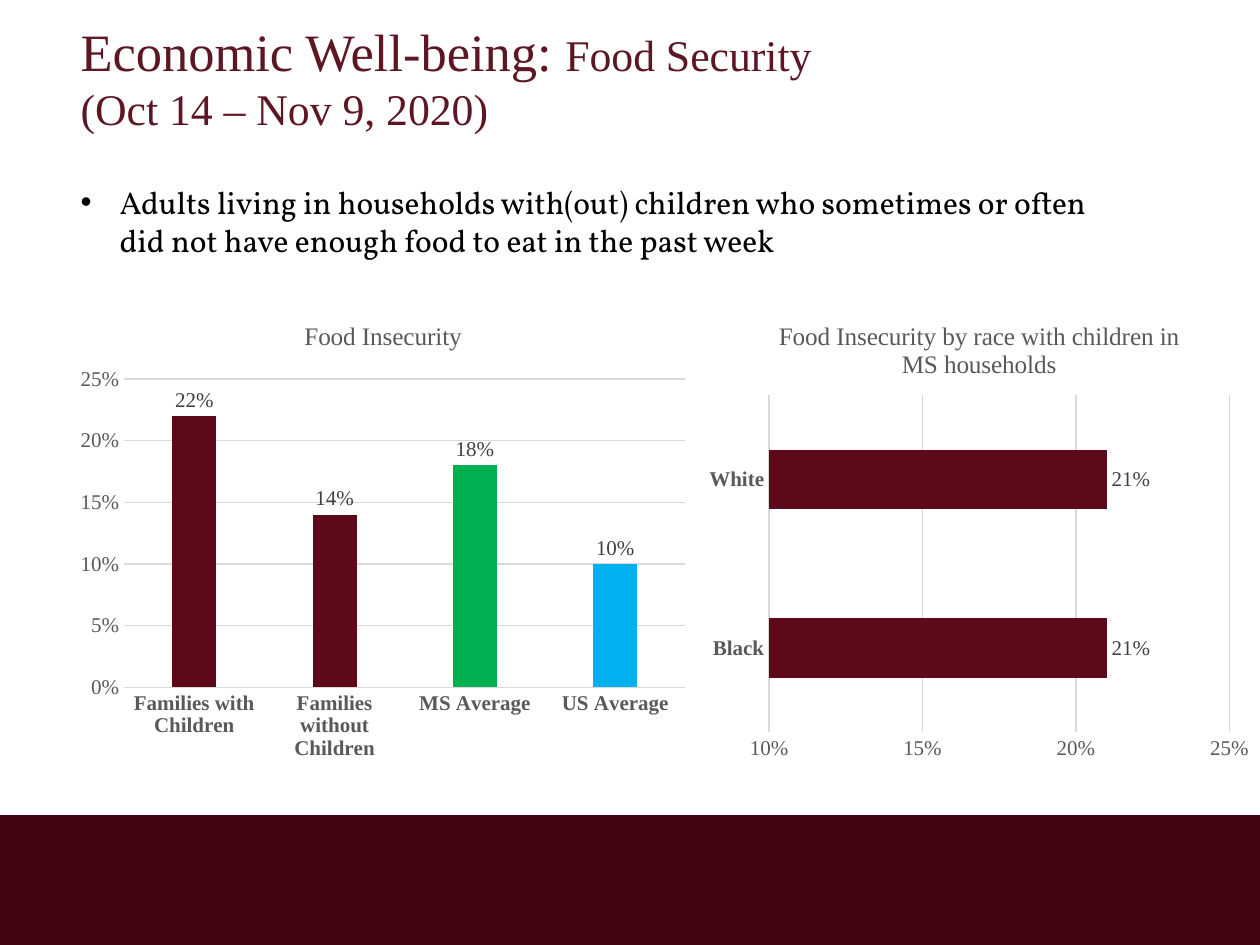
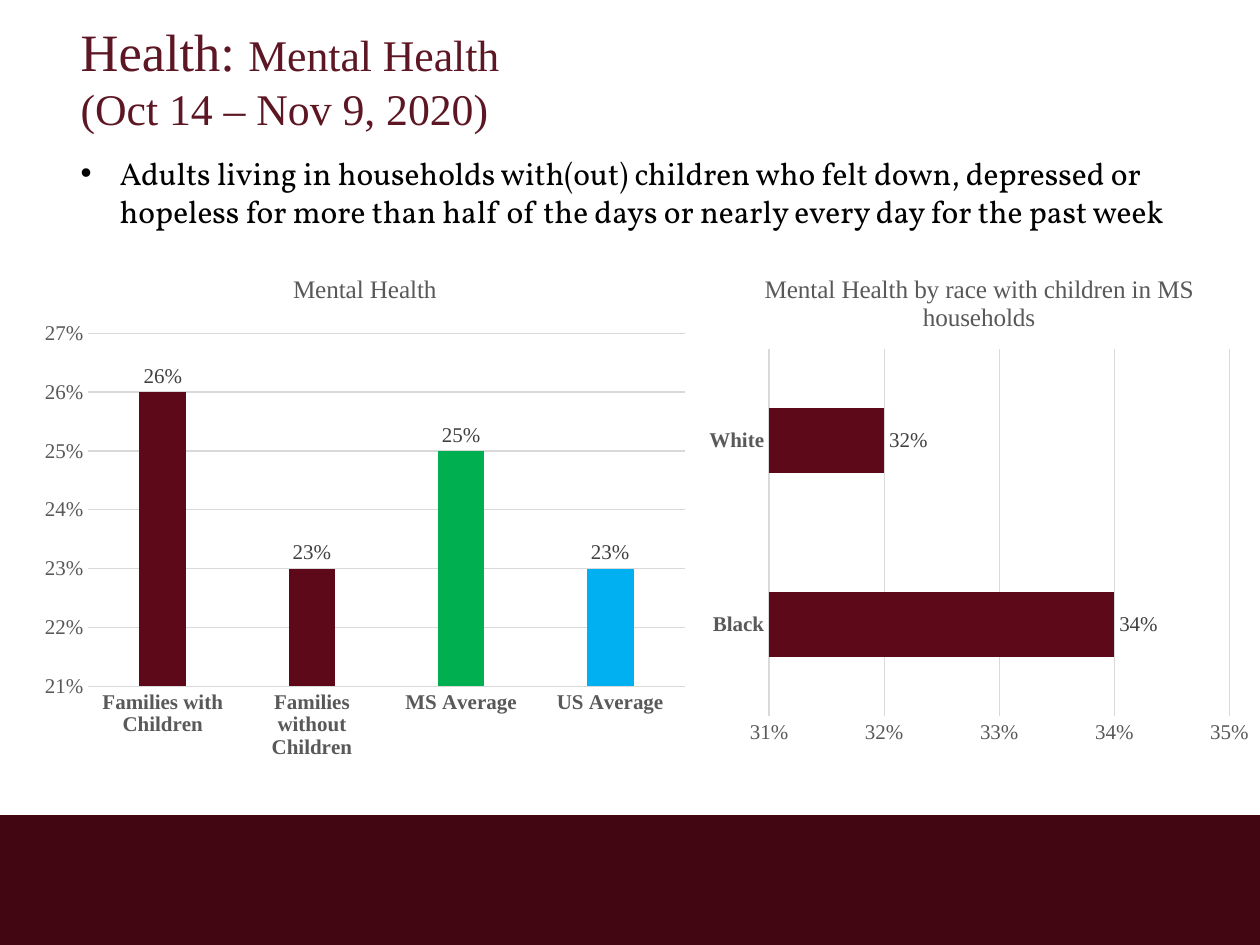
from pptx import Presentation
from pptx.chart.data import CategoryChartData
from pptx.dml.color import RGBColor
from pptx.enum.chart import XL_CHART_TYPE, XL_LABEL_POSITION, XL_TICK_MARK
from pptx.enum.shapes import MSO_SHAPE
from pptx.enum.text import MSO_ANCHOR, MSO_AUTO_SIZE, PP_ALIGN
from pptx.util import Inches, Pt

MAROON = RGBColor(0x5D, 0x17, 0x24)
BAND = RGBColor(0x41, 0x06, 0x11)
BAR = RGBColor(0x5E, 0x09, 0x1A)
GREEN = RGBColor(0x00, 0xB0, 0x50)
BLUE = RGBColor(0x00, 0xB0, 0xF0)
BLACK = RGBColor(0x00, 0x00, 0x00)
LABEL = RGBColor(0x40, 0x40, 0x40)
GREY = RGBColor(0x59, 0x59, 0x59)
GRID = RGBColor(0xD9, 0xD9, 0xD9)
SERIF, BODY = "Times New Roman", "Vollkorn"

PERIOD = "(Oct 14 – Nov 9, 2020)"
FAMILIES = ["Families with Children", "Families without Children", "MS Average", "US Average"]
RACES = ["Black", "White"]
SLIDES = [
    dict(
        topic="Economic Well-being: ", subject="Food Security",
        bullet="Adults living in households with(out) children who sometimes or often "
               "did not have enough food to eat in the past week",
        bullet_box=(0.54, 1.4, 8.54, 0.71),
        families=dict(title="Food Insecurity", values=[0.22, 0.14, 0.18, 0.1],
                      scale=(0, 0.25, 0.05), box=(0.54, 2.38, 5, 3.72)),
        races=dict(title="Food Insecurity by race with children in MS households",
                   values=[0.21, 0.21], scale=(0.1, 0.25, 0.05), box=(5.54, 2.38, 4.46, 3.72)),
    ),
    dict(
        topic="Health: ", subject="Mental Health",
        bullet="Adults living in households with(out) children who felt down, depressed or "
               "hopeless for more than half of the days or nearly every day for the past week",
        bullet_box=(0.54, 1.17, 9.04, 0.71),
        families=dict(title="Mental Health", values=[0.26, 0.23, 0.25, 0.23],
                      scale=(0.21, 0.27, 0.01), box=(0.25, 2, 5.29, 4.1)),
        races=dict(title="Mental Health by race with children in MS households",
                   values=[0.34, 0.32], scale=(0.31, 0.35, 0.01), box=(5.54, 2, 4.46, 3.98)),
    ),
]


def place(sp, box):
    sp.left, sp.top, sp.width, sp.height = map(Inches, box)


def set_font(font, size, color, name=SERIF, bold=False):
    font.size, font.name, font.bold = Pt(size), name, bold
    font.color.rgb = color


def fill(fmt, color):
    fmt.fill.solid()
    fmt.fill.fore_color.rgb = color


def add_band(s):
    sp = s.shapes.add_shape(MSO_SHAPE.RECTANGLE, *map(Inches, (0, 6.47, 10, 1.03)))
    sp.shadow.inherit = False
    fill(sp, BAND)
    sp.line.fill.background()


def set_title(sp, topic, subject):
    place(sp, (0.54, 0.04, 8.54, 1.25))
    tf = sp.text_frame
    tf.vertical_anchor, tf.margin_top = MSO_ANCHOR.TOP, Inches(0.11)
    tf.auto_size = MSO_AUTO_SIZE.NONE
    lines = [[(topic, 30), (subject, 25)], [(PERIOD, 25)]]
    for i, runs in enumerate(lines):
        p = tf.add_paragraph() if i else tf.paragraphs[0]
        p.alignment = PP_ALIGN.LEFT
        for text, size in runs:
            r = p.add_run()
            r.text = text
            set_font(r.font, size, MAROON)


def set_bullet(sp, text, box):
    place(sp, box)
    tf = sp.text_frame
    tf.auto_size = MSO_AUTO_SIZE.NONE
    p = tf.paragraphs[0]
    p.text = text
    p.space_before = Pt(0)
    pPr = p._p.get_or_add_pPr()
    pPr.set("marL", str(Inches(0.31)))
    pPr.set("indent", str(-Inches(0.31)))
    set_font(p.font, 18, BLACK, BODY)


def add_chart(s, kind, cats, series, gap, title, values, scale, box):
    data = CategoryChartData(number_format="0%")
    data.categories = cats
    data.add_series(series, values)
    chart = s.shapes.add_chart(kind, *map(Inches, box), data).chart
    set_font(chart.font, 12, BLACK)
    chart.has_legend = False
    chart.has_title = True
    chart.chart_title.include_in_layout = False
    p = chart.chart_title.text_frame.paragraphs[0]
    p.text = title
    set_font(p.font, 14.4, GREY)

    cat, val = chart.category_axis, chart.value_axis
    for axis in (cat, val):
        axis.major_tick_mark = axis.minor_tick_mark = XL_TICK_MARK.NONE
        set_font(axis.tick_labels.font, 12, GREY, bold=axis is cat)
    val.minimum_scale, val.maximum_scale, val.major_unit = scale
    val.tick_labels.number_format = "0%"
    val.tick_labels.number_format_is_linked = False
    val.format.line.fill.background()
    val.has_major_gridlines = True
    for line in (cat.format.line, val.major_gridlines.format.line):
        line.color.rgb, line.width = GRID, Pt(0.75)

    plot = chart.plots[0]
    plot.gap_width, plot.vary_by_categories = gap, False
    plot.series[0].invert_if_negative = False
    fill(plot.series[0].format, BAR)
    labels = plot.series[0].data_labels
    labels.show_value = True
    labels.position = XL_LABEL_POSITION.OUTSIDE_END
    labels.number_format, labels.number_format_is_linked = "0%", False
    set_font(labels.font, 12, LABEL)
    return plot


def build_slide(prs, d):
    s = prs.slides.add_slide(prs.slide_layouts[1])
    add_band(s)
    set_title(s.shapes.title, d["topic"], d["subject"])
    set_bullet(s.placeholders[1], d["bullet"], d["bullet_box"])
    plot = add_chart(s, XL_CHART_TYPE.COLUMN_CLUSTERED, FAMILIES,
                     d["families"]["title"], 219, **d["families"])
    plot.overlap = -27
    for i, color in ((2, GREEN), (3, BLUE)):
        fill(plot.series[0].points[i].format, color)
    add_chart(s, XL_CHART_TYPE.BAR_CLUSTERED, RACES, "Series 1", 182, **d["races"])


def main():
    """Build the two survey slides and save them."""
    prs = Presentation()
    prs.slide_width, prs.slide_height = Inches(10), Inches(7.5)
    for d in SLIDES:
        build_slide(prs, d)
    prs.save("out.pptx")


if __name__ == "__main__":
    main()
